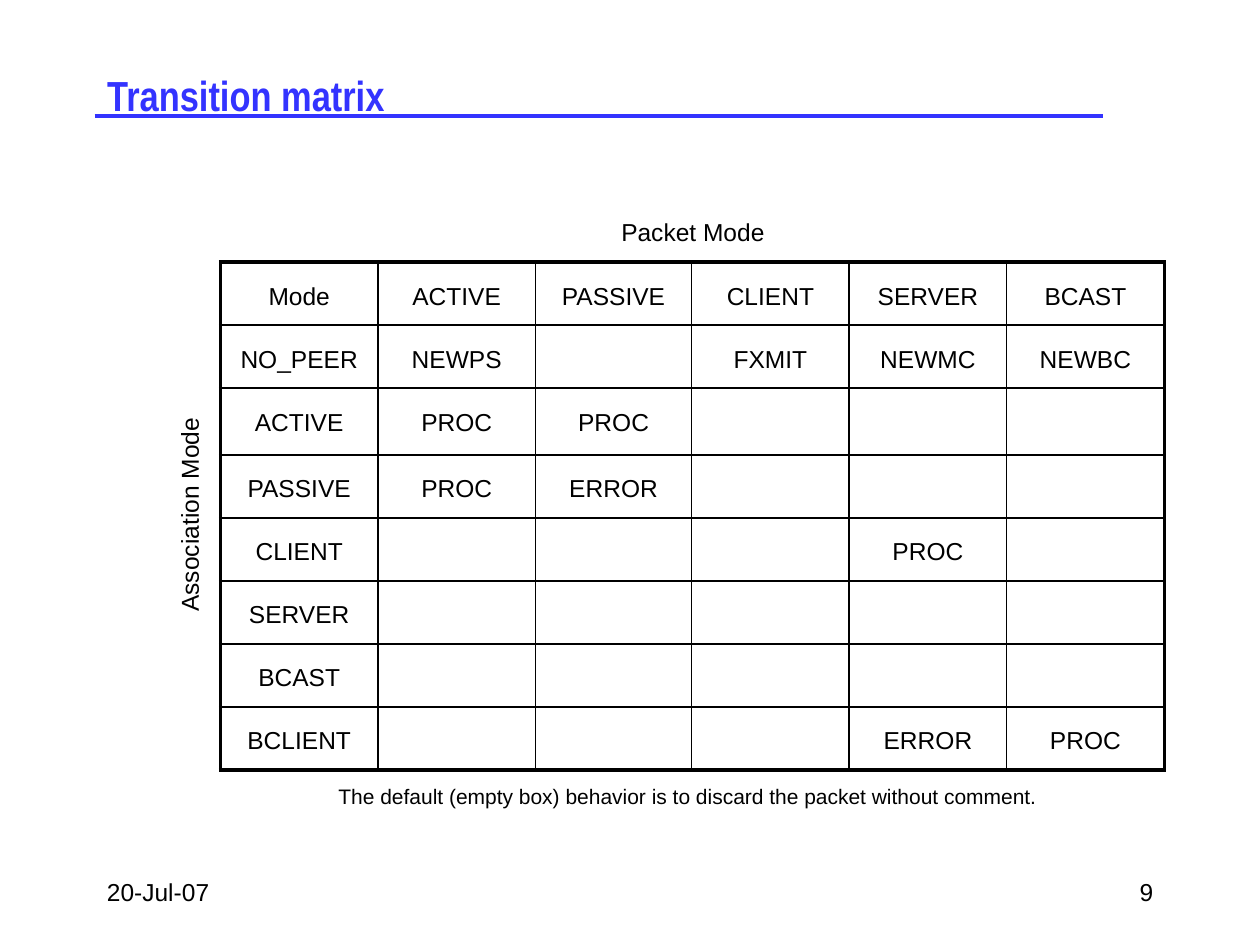
from pptx import Presentation
from pptx.dml.color import RGBColor
from pptx.enum.text import MSO_ANCHOR, MSO_AUTO_SIZE, PP_ALIGN
from pptx.oxml import parse_xml
from pptx.oxml.ns import nsdecls
from pptx.util import Inches, Pt

BLUE = RGBColor(0x33, 0x33, 0xFF)
BLACK = RGBColor(0, 0, 0)
THIN, THICK = 1, 2.25

TITLE = "Transition matrix"
MATRIX = [
    ["Mode", "ACTIVE", "PASSIVE", "CLIENT", "SERVER", "BCAST"],
    ["NO_PEER", "NEWPS", "", "FXMIT", "NEWMC", "NEWBC"],
    ["ACTIVE", "PROC", "PROC", "", "", ""],
    ["PASSIVE", "PROC", "ERROR", "", "", ""],
    ["CLIENT", "", "", "", "PROC", ""],
    ["SERVER", "", "", "", "", ""],
    ["BCAST", "", "", "", "", ""],
    ["BCLIENT", "", "", "", "ERROR", "PROC"],
]
COLUMN_WIDTHS = [1.25, 1.25, 1.24, 1.25, 1.25, 1.25]
ROW_HEIGHTS = [0.5, 0.5, 0.53] + [0.5] * 5
TABLE_LEFT, TABLE_TOP = 1.75, 2.08

LABELS = [
    ("20-Jul-07", (0.75, 6.83, 2.08, 0.5), 14, PP_ALIGN.LEFT, MSO_ANCHOR.MIDDLE, 0),
    ("9", (7.17, 6.83, 2.08, 0.5), 14, PP_ALIGN.RIGHT, MSO_ANCHOR.MIDDLE, 0),
    ("Packet Mode", (1.75, 1.67, 7.5, 0.33), 14, PP_ALIGN.CENTER, MSO_ANCHOR.TOP, 0),
    ("Association Mode", (-0.5, 3.92, 4, 0.33), 14, PP_ALIGN.CENTER, MSO_ANCHOR.TOP, 270),
    ("The default (empty box) behavior is to discard the packet without comment.",
     (1.75, 6.17, 7.42, 0.3), 12, PP_ALIGN.CENTER, MSO_ANCHOR.TOP, 0),
]


def style(paragraph, size, align, color=BLACK, name="Arial", bold=False):
    paragraph.alignment = align
    for font in [paragraph.font] + [run.font for run in paragraph.runs]:
        font.size, font.name, font.bold = Pt(size), name, bold
        font.color.rgb = color


def add_title(slide):
    rule = slide.shapes.add_connector(1, Inches(0.75), Inches(0.92), Inches(8.75), Inches(0.92))
    rule.line.color.rgb = BLUE
    rule.line.width = Pt(2)
    rule._element.spPr.append(parse_xml(f"<a:effectLst {nsdecls('a')}/>"))
    title = slide.shapes.title
    title.left, title.top, title.width, title.height = map(Inches, (0.75, 0.42, 8.5, 0.67))
    frame = title.text_frame
    frame.text = TITLE
    frame.auto_size = MSO_AUTO_SIZE.NONE
    frame.vertical_anchor = MSO_ANCHOR.MIDDLE
    style(frame.paragraphs[0], 24, PP_ALIGN.LEFT, BLUE, "Arial Narrow", True)


def add_label(slide, text, box, size, align, anchor, rotation):
    label = slide.shapes.add_textbox(*map(Inches, box))
    label.rotation = rotation
    frame = label.text_frame
    frame.text = text
    frame.word_wrap = True
    frame.vertical_anchor = anchor
    style(frame.paragraphs[0], size, align)


def set_borders(cell, outer_sides):
    properties = cell._tc.get_or_add_tcPr()
    for side, is_outer in zip("LRTB", outer_sides):
        width = Pt(THICK if is_outer else THIN)
        properties.append(parse_xml(
            f'<a:ln{side} {nsdecls("a")} w="{width}"><a:solidFill>'
            f'<a:srgbClr val="{BLACK}"/></a:solidFill></a:ln{side}>'))


def add_matrix(slide):
    last_row, last_column = len(MATRIX) - 1, len(MATRIX[0]) - 1
    table = slide.shapes.add_table(
        last_row + 1, last_column + 1, Inches(TABLE_LEFT), Inches(TABLE_TOP),
        Inches(sum(COLUMN_WIDTHS)), Inches(sum(ROW_HEIGHTS))).table
    table.first_row = table.horz_banding = False
    for column, width in zip(table.columns, COLUMN_WIDTHS):
        column.width = Inches(width)
    for r, (row, height) in enumerate(zip(MATRIX, ROW_HEIGHTS)):
        table.rows[r].height = Inches(height)
        for c, text in enumerate(row):
            cell = table.cell(r, c)
            cell.text = text
            paragraph = cell.text_frame.paragraphs[0]
            style(paragraph, 14, PP_ALIGN.CENTER)
            if text:
                paragraph.line_spacing = Pt(24)
                paragraph.space_before = Pt(8)
            set_borders(cell, (c == 0, c == last_column, r == 0, r == last_row))
            cell.fill.background()


def main():
    """Build the transition matrix slide."""
    presentation = Presentation()
    presentation.slide_width, presentation.slide_height = Inches(10), Inches(7.5)
    slide = presentation.slides.add_slide(presentation.slide_layouts[5])
    add_title(slide)
    add_matrix(slide)
    for label in LABELS:
        add_label(slide, *label)
    presentation.save("out.pptx")


if __name__ == "__main__":
    main()
